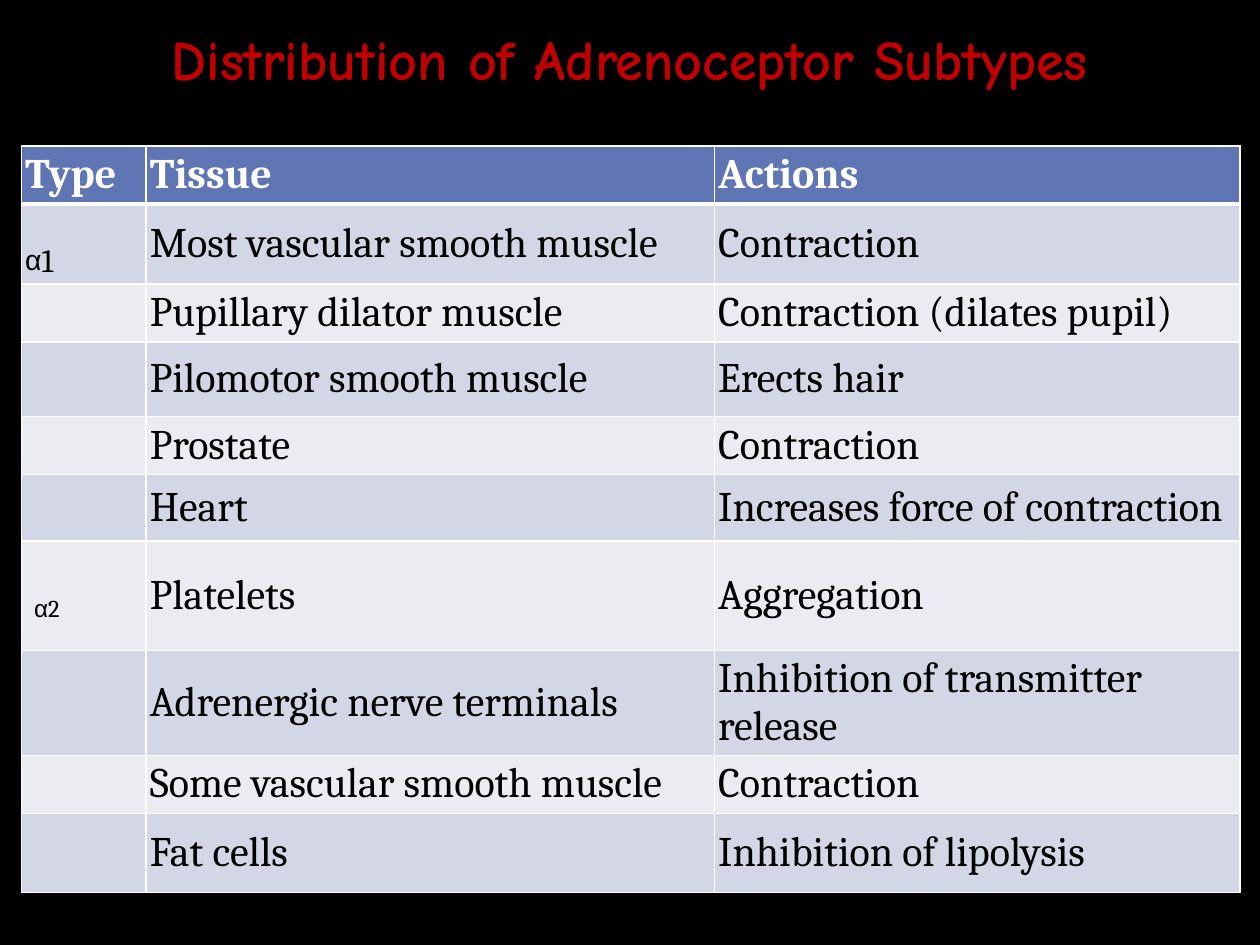
from lxml import etree
from pptx import Presentation
from pptx import util as u
from pptx.dml.color import RGBColor
from pptx.enum import text
from pptx.oxml import ns

BLACK = RGBColor(0x00, 0x00, 0x00)
WHITE = RGBColor(0xFF, 0xFF, 0xFF)
RED = RGBColor(0xC0, 0x00, 0x00)
HEADER_BLUE = RGBColor(0x60, 0x76, 0xB4)
BANDS = [RGBColor(0xEA, 0xEC, 0xF2), RGBColor(0xD2, 0xD6, 0xE5)]

HEADINGS = ["Type", "Tissue", "Actions"]
ADRENOCEPTORS = [
    ("α1", "Most vascular smooth muscle", "Contraction"),
    ("", "Pupillary dilator muscle", "Contraction (dilates pupil)"),
    ("", "Pilomotor smooth muscle", "Erects hair"),
    ("", "Prostate", "Contraction"),
    ("", "Heart", "Increases force of contraction"),
    ("α2", "Platelets", "Aggregation"),
    ("", "Adrenergic nerve terminals", "Inhibition of transmitter release"),
    ("", "Some vascular smooth muscle", "Contraction"),
    ("", "Fat cells", "Inhibition of lipolysis"),
]
SUBTYPE_SIZES = {"α1": (28, 32), "α2": (24, 24)}
SUBTYPE_INDENTS = {"α2": 0.07}
COLUMN_SHARES = [0.99, 4.51, 4.17]
ROW_HEIGHTS = [0.46, 0.63, 0.46, 0.59, 0.46, 0.53, 0.87, 0.83, 0.46, 0.63]
CELL_MARGIN = 0.03


def add_run(paragraph, words, size, color, font="Cambria", bold=False, baseline=None):
    run = paragraph.add_run()
    run.text = words
    run.font.size = u.Pt(size)
    run.font.name = font
    run.font.bold = bold
    run.font.color.rgb = color
    if baseline is not None:
        run._r.get_or_add_rPr().set("baseline", str(baseline))


def add_title(slide, left, top, width, height):
    title = slide.shapes.title
    title.left, title.top = u.Inches(left), u.Inches(top)
    title.width, title.height = u.Inches(width), u.Inches(height)
    title.text_frame.vertical_anchor = text.MSO_ANCHOR.MIDDLE
    paragraph = title.text_frame.paragraphs[0]
    paragraph.alignment = text.PP_ALIGN.CENTER
    add_run(paragraph, "Distribution of Adrenoceptor Subtypes", 32, RED, "Comic Neue", True)


def set_borders(cell, widths):
    properties = cell._tc.get_or_add_tcPr()
    for position, (side, width) in enumerate(widths.items()):
        line = etree.Element(ns.qn(f"a:ln{side}"), w=str(u.Pt(width)))
        fill = etree.SubElement(line, ns.qn("a:solidFill"))
        etree.SubElement(fill, ns.qn("a:srgbClr"), val=str(WHITE))
        properties.insert(position, line)


def format_cell(cell, fill, top_width, bottom_width):
    cell.fill.solid()
    cell.fill.fore_color.rgb = fill
    cell.vertical_anchor = text.MSO_ANCHOR.MIDDLE
    cell.margin_left = cell.margin_right = u.Inches(CELL_MARGIN)
    cell.margin_top = cell.margin_bottom = u.Inches(CELL_MARGIN)
    set_borders(cell, {"L": 1, "R": 1, "T": top_width, "B": bottom_width})


def fill_subtype(cell, subtype):
    cell.margin_left = u.Inches(CELL_MARGIN + SUBTYPE_INDENTS.get(subtype, 0))
    paragraph = cell.text_frame.paragraphs[0]
    for letter, size, font in zip(subtype, SUBTYPE_SIZES[subtype], ("Arial", "Cambria")):
        add_run(paragraph, letter, size, BLACK, font, baseline=-25000)


def add_adrenoceptor_table(slide, left, top, width):
    rows = [HEADINGS, *ADRENOCEPTORS]
    frame = slide.shapes.add_table(
        len(rows), len(HEADINGS), u.Inches(left), u.Inches(top),
        u.Inches(width), u.Inches(sum(ROW_HEIGHTS)))
    table = frame.table
    for column, share in zip(table.columns, COLUMN_SHARES):
        column.width = u.Inches(width * share / sum(COLUMN_SHARES))
    for row_index, (entries, height) in enumerate(zip(rows, ROW_HEIGHTS)):
        table.rows[row_index].height = u.Inches(height)
        header = row_index == 0
        fill = HEADER_BLUE if header else BANDS[row_index % 2]
        for column_index, entry in enumerate(entries):
            cell = table.cell(row_index, column_index)
            format_cell(cell, fill, 3 if row_index == 1 else 1, 3 if header else 1)
            if entry in SUBTYPE_SIZES:
                fill_subtype(cell, entry)
            elif entry:
                add_run(cell.text_frame.paragraphs[0], entry, 24,
                        WHITE if header else BLACK, bold=header)


def main():
    presentation = Presentation()
    presentation.slide_width = u.Inches(10)
    presentation.slide_height = u.Inches(7.5)
    slide = presentation.slides.add_slide(presentation.slide_layouts[5])
    slide.background.fill.solid()
    slide.background.fill.fore_color.rgb = BLACK
    add_title(slide, 0.5, 0, 9, 0.92)
    add_adrenoceptor_table(slide, 0.17, 1.16, 9.67)
    presentation.save("out.pptx")


if __name__ == "__main__":
    main()
